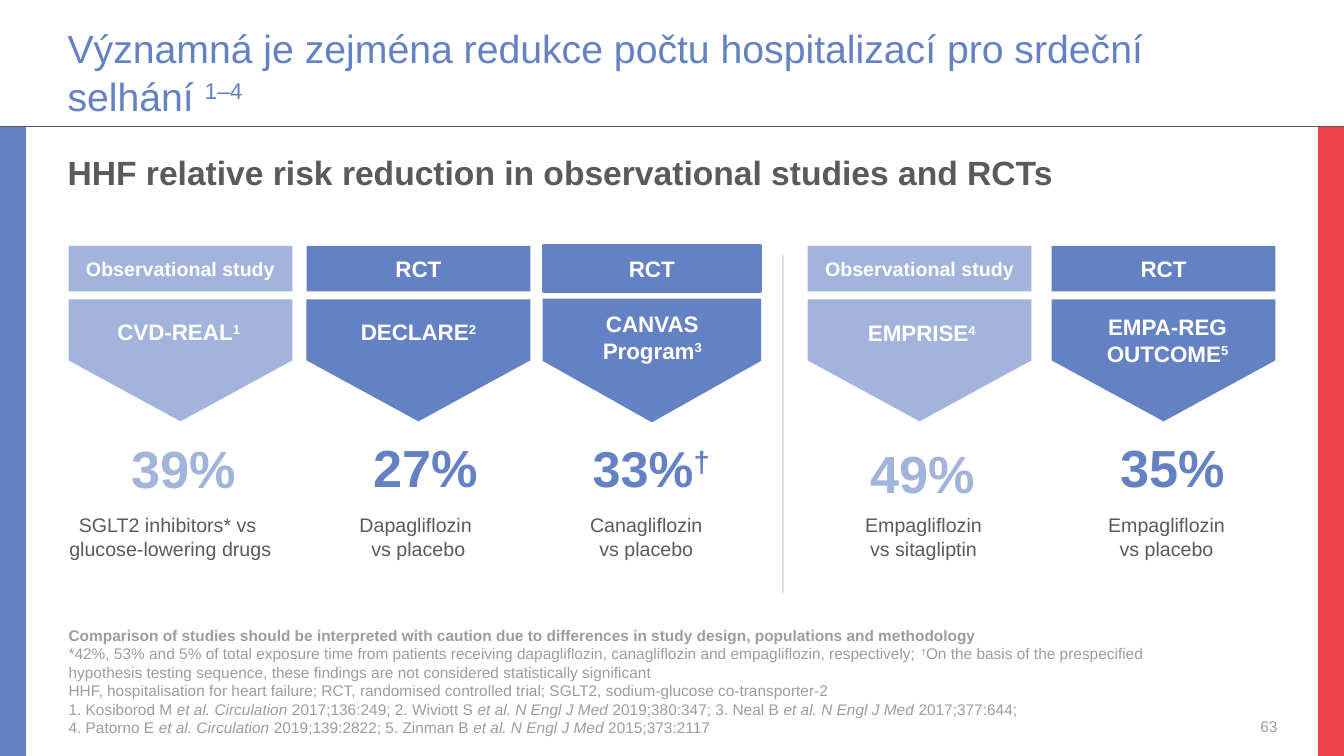
from dataclasses import dataclass

from lxml.etree import SubElement
from pptx import Presentation
from pptx.dml.color import RGBColor
from pptx.enum.shapes import MSO_CONNECTOR, MSO_SHAPE
from pptx.enum.text import MSO_ANCHOR, MSO_AUTO_SIZE, PP_ALIGN
from pptx.oxml.ns import qn
from pptx.util import Inches, Pt

WIDTH, HEIGHT = 13.33, 7.5
MARGIN, HEADER, BAR = 0.67, 1.25, 0.26
CENTER, LEFT, RIGHT = PP_ALIGN.CENTER, PP_ALIGN.LEFT, PP_ALIGN.RIGHT
TOP, MIDDLE, BOTTOM = MSO_ANCHOR.TOP, MSO_ANCHOR.MIDDLE, MSO_ANCHOR.BOTTOM
COLORS = {"blue": "6482C3", "light": "A2B4DB", "red": "F0414B", "text": "5A5A5A",
          "note": "9C9C9C", "divider": "DEDEDE", "white": "FFFFFF"}


@dataclass
class Study:
    """One study column: its text, its left edge and the centres of its text boxes."""
    name: str
    mark: str
    kind: str
    color: str
    rate: str
    drugs: str
    left: float
    name_box: tuple
    rate_box: tuple
    drugs_box: tuple
    width: float = 2.22
    rate_mark: str = ""
    rate_size: float = 37.3
    outlined: bool = False


STUDIES = [
    Study("CVD-REAL", "1 ", "Observational study", "light", "39%",
          "SGLT2 inhibitors* vs \nglucose-lowering drugs", 0.68,
          (1.79, 3.11, 1.88), (1.82, 4.46, 0.35), (1.69, 2.8)),
    Study("DECLARE", "2", "RCT", "blue", "27%", "Dapagliflozin \nvs placebo", 3.04,
          (4.15, 3.11, 1.73), (4.22, 4.45, 0.35), (4.15, 1.5)),
    Study("CANVAS Program", "3", "RCT", "blue", "33%", "Canagliflozin\nvs placebo", 5.39,
          (6.47, 3.03, 1.85), (6.46, 4.46, 0.35), (6.41, 1.38),
          width=2.15, rate_mark="†", rate_size=36, outlined=True),
    Study("EMPRISE", "4 ", "Observational study", "light", "49%",
          "Empagliflozin\nvs sitagliptin", 8.01,
          (9.16, 3.12, 1.88), (9.15, 4.46, 0.45), (9.16, 1.58)),
    Study("EMPA-REG OUTCOME", "5", "RCT", "blue", "35%", "Empagliflozin\nvs placebo", 10.43,
          (11.58, 3.06, 1.6), (11.63, 4.46, 0.34), (11.57, 1.38)),
]

NOTES = [
    [("Comparison of studies should be interpreted with caution due to differences in study "
      "design, populations and methodology", "bold")],
    [("*42%, 53% and 5% of total exposure time from patients receiving dapagliflozin, "
      "canagliflozin and empagliflozin, respectively; ", ""), ("†", "super"),
     ("On the basis of the prespecified hypothesis testing sequence, these findings are not "
      "considered statistically significant\nHHF, hospitalisation for heart failure; RCT, "
      "randomised controlled trial; SGLT2, sodium-glucose co-transporter-2", "")],
    [("1. Kosiborod M ", ""), ("et al. Circulation ", "italic"),
     ("2017;136:249; 2. Wiviott S ", ""), ("et al. N Engl J Med ", "italic"),
     ("2019;380:347; 3. Neal B ", ""), ("et al. N Engl J Med ", "italic"),
     ("2017;377:644; \n4. Patorno E ", ""), ("et al. Circulation ", "italic"),
     ("2019;139:2822; 5. Zinman B ", ""), ("et al. N Engl J Med ", "italic"),
     ("2015;373:2117", "")],
]


def rgb(name):
    """Return the named colour."""
    return RGBColor.from_string(COLORS[name])


def write(shape, paragraphs, size, color, bold=False, align=LEFT, anchor=TOP, inset=True):
    """Fill a shape with paragraphs of (text, style) spans."""
    frame = shape.text_frame
    frame.word_wrap = True
    frame.auto_size = MSO_AUTO_SIZE.NONE
    frame.vertical_anchor = anchor
    frame.margin_left = frame.margin_right = Inches(0.1 if inset else 0)
    frame.margin_top = frame.margin_bottom = Inches(0.05 if inset else 0)
    for index, spans in enumerate(paragraphs):
        para = frame.add_paragraph() if index else frame.paragraphs[0]
        para.alignment = align
        for text, style in spans:
            for number, line in enumerate(text.split("\n")):
                if number:
                    para.add_line_break()
                    SubElement(para._p[-1], qn("a:rPr"), sz=str(int(size * 100)))
                span = para.add_run()
                span.text = line
                span.font.name = "Arial"
                span.font.size = Pt(size)
                span.font.color.rgb = rgb(color)
                span.font.bold = bold or style == "bold"
                span.font.italic = style == "italic"
                if style == "super":
                    span.font._element.set("baseline", "30000")


def add_text(page, box, paragraphs, size, color, **options):
    """Add a text box at the given left, top, width and height."""
    shape = page.shapes.add_textbox(*map(Inches, box))
    write(shape, paragraphs, size, color, **options)


def add_block(page, kind, box, color, line_width=0):
    """Add a filled preset shape, outlined in its own colour on request."""
    shape = page.shapes.add_shape(kind, *map(Inches, box))
    shape.shadow.inherit = False
    shape.fill.solid()
    shape.fill.fore_color.rgb = rgb(color)
    if line_width:
        shape.line.color.rgb = rgb(color)
        shape.line.width = Pt(line_width)
    else:
        shape.line.fill.background()
    return shape


def add_line(page, ends, color, width):
    """Add a straight line between two points."""
    line = page.shapes.add_connector(MSO_CONNECTOR.STRAIGHT, *map(Inches, ends))
    line.line.color.rgb = rgb(color)
    line.line.width = Pt(width)
    SubElement(line._element.spPr, qn("a:effectLst"))


def add_frame(page):
    """Add the side bars and the rule under the header."""
    for left, color in ((0, "blue"), (WIDTH - BAR, "red")):
        add_block(page, MSO_SHAPE.RECTANGLE, (left, HEADER, BAR, HEIGHT - HEADER), color)
    add_line(page, (0, HEADER, WIDTH, HEADER), "text", 0.25)


def add_header(page):
    """Place the title and the subtitle."""
    title = page.shapes.title
    title.left, title.top, title.width, title.height = map(Inches, (MARGIN, 0.18, 11.2, 1))
    write(title, [[("Významná je zejména redukce počtu hospitalizací pro srdeční selhání ", ""),
                   ("1–4", "super")]], 28, "blue", anchor=BOTTOM, inset=False)
    add_text(page, (MARGIN, 1.51, 12.04, 0.66),
             [[("HHF relative risk reduction in observational studies and RCTs", "")]],
             24, "text", bold=True, inset=False)


def add_study(page, study, top=2.44, plate_height=1.21):
    """Add one study column: tag, downward plate, name, rate and drugs."""
    tag = add_block(page, MSO_SHAPE.RECTANGLE, (study.left, top, study.width, 0.45),
                    study.color, 2.25 if study.outlined else 0)
    write(tag, [[(study.kind, "")]], 16 if study.kind == "RCT" else 14, "white",
          bold=True, align=CENTER, anchor=MIDDLE)
    shift = (study.width - plate_height) / 2
    plate = add_block(page, MSO_SHAPE.PENTAGON,
                      (study.left + shift, top + 0.53 - shift, plate_height, study.width),
                      study.color, 1.25 if study.outlined else 0)
    plate.rotation = 90
    center, name_top, width = study.name_box
    add_text(page, (center - width / 2, name_top, width, 0.62),
             [[(study.name, ""), (study.mark, "super")]], 16, "white", bold=True, align=CENTER)
    center, rate_top, height = study.rate_box
    rate = [(study.rate, "")] + ([(study.rate_mark, "super")] if study.rate_mark else [])
    add_text(page, (center - 0.75, rate_top, 1.5, height), [rate], study.rate_size,
             study.color, bold=True, align=CENTER, anchor=MIDDLE)
    center, width = study.drugs_box
    add_text(page, (center - width / 2, 5.04, width, 0.57), [[(study.drugs, "")]],
             14, "text", align=CENTER)


def add_footer(page):
    """Add the notes and the page number."""
    add_text(page, (0.68, 6.23, 11.18, 1.08), NOTES, 11, "note", anchor=BOTTOM, inset=False)
    add_text(page, (12.02, 6.9, 0.65, 0.4), [[("63", "")]], 11, "note",
             align=RIGHT, anchor=BOTTOM, inset=False)


def main():
    """Build the slide and save the deck."""
    deck = Presentation()
    deck.slide_width, deck.slide_height = Inches(WIDTH), Inches(HEIGHT)
    page = deck.slides.add_slide(deck.slide_layouts[5])
    add_frame(page)
    add_header(page)
    for study in STUDIES:
        add_study(page, study)
    add_line(page, (7.77, 2.53, 7.77, 5.88), "divider", 1.5)
    add_footer(page)
    deck.save("out.pptx")


if __name__ == "__main__":
    main()
